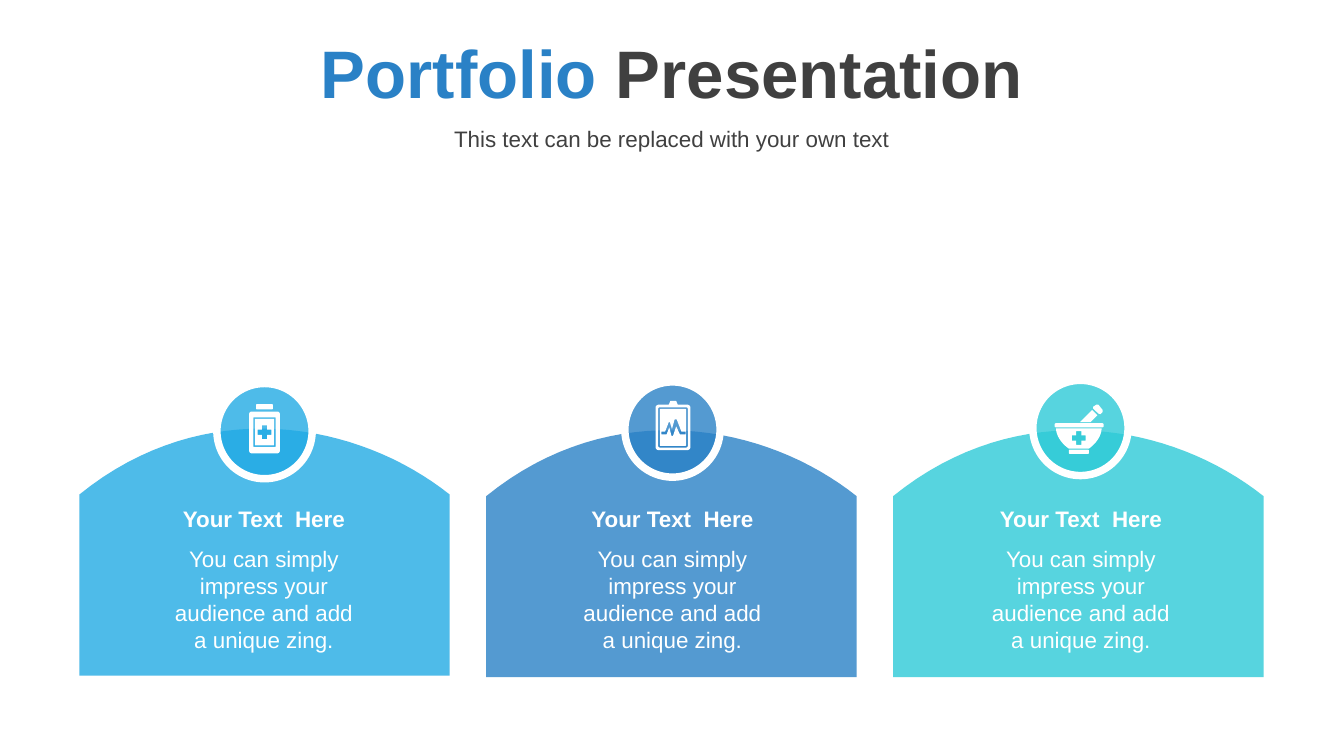
import pptx
import pptx.dml.color
import pptx.enum.shapes
import pptx.enum.text
import pptx.oxml
import pptx.oxml.ns
import pptx.util

Cm = pptx.util.Cm
RGB = pptx.dml.color.RGBColor
ALIGN = pptx.enum.text.PP_ALIGN
ANCHOR = pptx.enum.text.MSO_ANCHOR

SKY = RGB(0x22, 0xAA, 0xE4)
BLUE = RGB(0x2A, 0x81, 0xC6)
TEAL = RGB(0x2E, 0xCA, 0xD7)
DARK = RGB(0x40, 0x40, 0x40)
WHITE = RGB(0xFF, 0xFF, 0xFF)

HEAD = "Your Text  Here"
BODY = "You can simply impress your audience and add a unique zing."


def add_text(slide, box, runs, size=12, bold=False, anchor=ANCHOR.TOP, space=None):
    """Add a centred text box from (text, colour) runs."""
    frame = slide.shapes.add_textbox(*map(Cm, box)).text_frame
    frame.word_wrap = True
    frame.vertical_anchor = anchor
    para = frame.paragraphs[0]
    para.alignment = ALIGN.CENTER
    para.line_spacing = space
    for words, color in runs:
        run = para.add_run()
        run.text = words
        font = run.font
        font.name, font.size, font.bold = "Arial", pptx.util.Pt(size), bold
        font.color.rgb = color


def paint(shape, color, alpha=100):
    """Fill a shape flat, without outline or shadow."""
    shape.shadow.inherit = False
    shape.line.fill.background()
    shape.fill.solid()
    shape.fill.fore_color.rgb = color
    if alpha < 100:
        tint = shape._element.spPr.find(".//" + pptx.oxml.ns.qn("a:srgbClr"))
        ns = pptx.oxml.ns.nsdecls("a")
        tint.append(pptx.oxml.parse_xml(f'<a:alpha {ns} val="{alpha * 1000}"/>'))


def curve(a, b, c, d, steps=32):
    """Sample a cubic curve as a list of points."""
    points = []
    for i in range(steps + 1):
        t = i / steps
        u = 1 - t
        points.append(tuple(
            u**3 * p + 3 * u * u * t * q + 3 * u * t * t * r + t**3 * s
            for p, q, r, s in zip(a, b, c, d)))
    return points


def rect(x, y, w, h, r=0):
    """Return a rectangle ring with corners rounded by r."""
    if not r:
        return [(x, y), (x + w, y), (x + w, y + h), (x, y + h)]
    ring = []
    for px, py, dx, dy in ((x, y, 1, 1), (x + w, y, -1, 1),
                           (x + w, y + h, -1, -1), (x, y + h, 1, -1)):
        side, flat = (px, py + dy * r), (px + dx * r, py)
        ends = (side, flat) if dx == dy else (flat, side)
        k = 0.45 * r
        near = {side: (px, py + dy * k), flat: (px + dx * k, py)}
        ring += curve(ends[0], near[ends[0]], near[ends[1]], ends[1], 6)
    return ring


def cross(x, y, arm=0.13, half=0.05):
    """Return a plus sign ring centred on a point."""
    ring = [(-half, -arm), (half, -arm), (half, -half), (arm, -half),
            (arm, half), (half, half), (half, arm), (-half, arm),
            (-half, half), (-arm, half), (-arm, -half), (-half, -half)]
    return [(x + dx, y + dy) for dx, dy in ring]


def draw(slide, left, top, rings, color, alpha=100):
    """Draw rings as one outline, inner rings cutting holes."""
    first, *rest = [[(Cm(x), Cm(y)) for x, y in ring] for ring in rings]
    pen = slide.shapes.build_freeform(*first[0])
    pen.add_line_segments(first[1:], close=True)
    for ring in rest:
        pen.move_to(*ring[0])
        pen.add_line_segments(ring[1:], close=True)
    paint(pen.convert_to_shape(Cm(left), Cm(top)), color, alpha)


def bottle():
    """Return the rings of a medicine bottle."""
    return [rect(0.61, 0.53, 0.58, 0.79, 0.05), rect(0.69, 0.64, 0.42, 0.56),
            rect(0.72, 0.67, 0.36, 0.5), cross(0.9, 0.92),
            rect(0.74, 0.39, 0.32, 0.1, 0.02)]


def chart():
    """Return the rings of a clipboard with a pulse line."""
    pulse = [(0.69, 0.94), (0.76, 0.94), (0.83, 0.76), (0.85, 0.76),
             (0.89, 0.89), (0.94, 0.71), (0.98, 0.71), (1.07, 0.94),
             (1.15, 0.94), (1.15, 0.99), (1.04, 0.99), (0.97, 0.84),
             (0.91, 1.02), (0.88, 1.02), (0.84, 0.86), (0.79, 0.99),
             (0.69, 0.99)]
    clip = [(0.83, 0.43), (0.86, 0.36), (0.97, 0.36), (1, 0.43)]
    return [rect(0.58, 0.43, 0.66, 0.86, 0.06),
            rect(0.63, 0.48, 0.56, 0.76, 0.03),
            rect(0.66, 0.51, 0.5, 0.7, 0.02), pulse, clip]


def mortar():
    """Return the rings of a mortar and pestle."""
    bowl = (curve((1.3, 0.91), (1.3, 1.05), (1.19, 1.2), (1.06, 1.29))
            + curve((0.68, 1.29), (0.55, 1.2), (0.44, 1.05), (0.44, 0.91)))
    stem = [(1.12, 0.56), (1.22, 0.66), (1.09, 0.79), (0.89, 0.79)]
    grip = [(1.2, 0.46), (1.24, 0.46), (1.32, 0.56), (1.32, 0.6),
            (1.28, 0.64), (1.24, 0.63), (1.14, 0.53), (1.14, 0.5)]
    return [bowl, cross(0.87, 1.09), rect(0.41, 0.81, 0.93, 0.08, 0.03),
            rect(0.68, 1.31, 0.38, 0.08, 0.02), stem, grip]


def add_header(slide, left, top, width):
    """Add the title and the line below it."""
    add_text(slide, (left, top, width, 1.9),
             [("Portfolio ", BLUE), ("Presentation", DARK)],
             size=36, bold=True, anchor=ANCHOR.MIDDLE)
    add_text(slide, (left, top + 1.93, width, 0.61),
             [("This text can be replaced with your own text", DARK)],
             anchor=ANCHOR.MIDDLE, space=0.9)


def add_card(slide, left, top, width, height, color):
    """Add a panel with an arched top."""
    arch = curve((0, 1.25), (0.34 * width, -0.68),
                 (0.755 * width, -0.12), (width, 1.25))
    draw(slide, left, top, [arch + [(width, height), (0, height)]], color, 80)


def add_badge(slide, left, top, size, color):
    """Add a white-ringed disc."""
    kind = pptx.enum.shapes.MSO_SHAPE.OVAL
    disc = slide.shapes.add_shape(kind, *map(Cm, (left, top, size, size)))
    paint(disc, color, 80)
    disc.line.color.rgb = WHITE
    disc.line.width = pptx.util.Pt(4)


def add_label(slide, left, top, width):
    """Add a heading with its body text."""
    add_text(slide, (left, top + 0.76, width, 2.31), [(BODY, WHITE)])
    add_text(slide, (left, top, width, 0.76), [(HEAD, WHITE)], bold=True)


def main():
    """Build the slide and save it."""
    deck = pptx.Presentation()
    deck.slide_width, deck.slide_height = Cm(25.4), Cm(14.29)
    slide = deck.slides.add_slide(deck.slide_layouts[6])
    add_header(slide, 0, 0.41, 25.4)
    colors = (SKY, BLUE, TEAL)
    tops = (8.1, 8.13, 8.13)
    spots = [(4.1 + 7.71 * i, 7.25 - 0.03 * i) for i in range(3)]
    for i, color in enumerate(colors):
        add_card(slide, 1.5 + 7.69 * i, tops[i], 7, 4.67, color)
    for spot, color in zip(spots, colors):
        add_badge(slide, *spot, 1.8, color)
    for i in range(3):
        add_label(slide, 2.95 + 7.72 * i, 9.42, 4.08)
    for spot, icon in zip(spots, (bottle, chart, mortar)):
        draw(slide, *spot, icon(), WHITE)
    deck.save("out.pptx")


if __name__ == "__main__":
    main()
